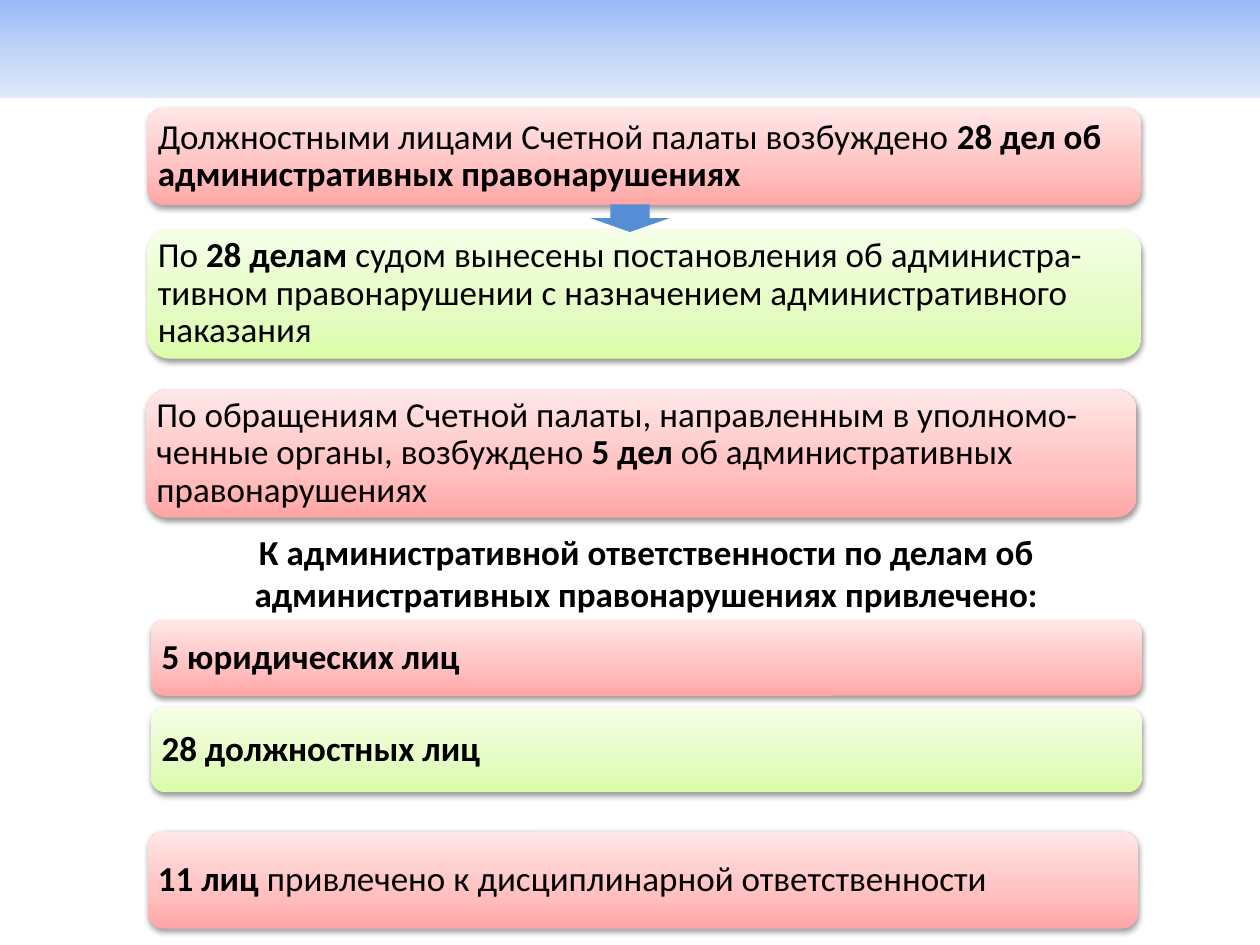
from dataclasses import dataclass

from lxml import etree
from pptx import Presentation
from pptx.dml import color as c
from pptx.enum import shapes as s, text as t
from pptx.oxml import ns
from pptx.util import Pt

BLACK = c.RGBColor(0x00, 0x00, 0x00)
ARROW_BLUE = c.RGBColor(0x55, 0x8E, 0xD5)

Stops = tuple[tuple[int, c.RGBColor], ...]
BLUE: Stops = (
    (0, c.RGBColor(0x98, 0xB9, 0xF6)),
    (50, c.RGBColor(0xC0, 0xD3, 0xF8)),
    (100, c.RGBColor(0xE0, 0xE9, 0xFB)),
)
RED: Stops = (
    (0, c.RGBColor(0xFF, 0xA6, 0xA5)),
    (35, c.RGBColor(0xFF, 0xC0, 0xBF)),
    (100, c.RGBColor(0xFF, 0xE7, 0xE7)),
)
GREEN: Stops = (
    (0, c.RGBColor(0xDA, 0xFD, 0xA7)),
    (35, c.RGBColor(0xE4, 0xFC, 0xC2)),
    (100, c.RGBColor(0xF5, 0xFF, 0xE7)),
)

TEXT_INSET = 6
CORNER_INSET = 0.05


@dataclass(frozen=True)
class Phrase:
    wording: str
    bold: bool = False


@dataclass(frozen=True)
class Card:
    left: float
    top: float
    width: float
    height: float
    stops: Stops
    phrases: tuple[Phrase, ...]


CARDS = (
    Card(84.3, 61.8, 568, 55.5, RED, (
        Phrase("Должностными лицами Счетной палаты возбуждено "),
        Phrase("28 дел об административных правонарушениях", True),
    )),
    Card(84.3, 130.8, 568, 74.2, GREEN, (
        Phrase("По "),
        Phrase("28 делам ", True),
        Phrase("судом вынесены постановления об администра-тивном "
               "правонарушении с назначением административного наказания"),
    )),
    Card(83.5, 222.5, 566, 73.3, RED, (
        Phrase("По обращениям Счетной палаты, направленным в "
               "уполномо-ченные органы, возбуждено "),
        Phrase("5 дел ", True),
        Phrase("об административных правонарушениях"),
    )),
    Card(86.4, 354.2, 566, 43.4, RED, (Phrase("5 юридических лиц", True),)),
    Card(86.4, 404, 566, 48.8, GREEN, (Phrase("28 должностных лиц", True),)),
    Card(84.3, 475.2, 566, 55.5, RED, (
        Phrase("11 лиц ", True),
        Phrase("привлечено к дисциплинарной ответственности"),
    )),
)


def add_plain(slide, kind, left: float, top: float, width: float, height: float):
    shape = slide.shapes.add_shape(kind, Pt(left), Pt(top), Pt(width), Pt(height))
    shape.shadow.inherit = False
    shape.line.fill.background()
    return shape


def paint_gradient(shape, stops: Stops, angle: int) -> None:
    shape.fill.gradient()
    shape.fill.gradient_angle = angle
    stop_list = shape.element.spPr.find(".//" + ns.qn("a:gsLst"))
    stop_list.clear()
    for position, shade in stops:
        stop = etree.SubElement(stop_list, ns.qn("a:gs"), pos=str(position * 1000))
        etree.SubElement(stop, ns.qn("a:srgbClr"), val=str(shade))


def cast_shadow(shape) -> None:
    effects = shape.element.spPr.find(ns.qn("a:effectLst"))
    shadow = etree.SubElement(
        effects, ns.qn("a:outerShdw"), blurRad=str(Pt(3.1)), dist=str(Pt(1.6)),
        dir="5400000", rotWithShape="0")
    shade = etree.SubElement(shadow, ns.qn("a:srgbClr"), val=str(BLACK))
    etree.SubElement(shade, ns.qn("a:alpha"), val="38000")


def write_phrases(paragraph, phrases: tuple[Phrase, ...]) -> None:
    paragraph.font.name = "Calibri"
    paragraph.font.size = Pt(20)
    paragraph.font.color.rgb = BLACK
    for phrase in phrases:
        run = paragraph.add_run()
        run.text = phrase.wording
        if len(phrases) > 1:
            run.font.bold = phrase.bold
    if len(phrases) == 1:
        paragraph.font.bold = phrases[0].bold


def add_card(slide, card: Card) -> None:
    box = add_plain(slide, s.MSO_SHAPE.ROUNDED_RECTANGLE,
                    card.left, card.top, card.width, card.height)
    paint_gradient(box, card.stops, 90)
    cast_shadow(box)
    frame = box.text_frame
    frame.word_wrap = True
    frame.vertical_anchor = t.MSO_ANCHOR.MIDDLE
    inset = Pt(TEXT_INSET - CORNER_INSET * card.height)
    frame.margin_left = frame.margin_right = inset
    frame.margin_top = frame.margin_bottom = inset
    paragraph = frame.paragraphs[0]
    paragraph.alignment = t.PP_ALIGN.LEFT
    paragraph.line_spacing = 0.9
    write_phrases(paragraph, card.phrases)


def add_heading(slide) -> None:
    heading = slide.shapes.add_textbox(Pt(86.4), Pt(299.5), Pt(566), Pt(55.7))
    heading.text_frame.word_wrap = True
    paragraph = heading.text_frame.paragraphs[0]
    paragraph.alignment = t.PP_ALIGN.CENTER
    write_phrases(paragraph, (
        Phrase("К административной ответственности по делам об "
               "административных правонарушениях привлечено:", True),
    ))


def main() -> None:
    deck = Presentation()
    deck.slide_width, deck.slide_height = Pt(720), Pt(540)
    slide = deck.slides.add_slide(deck.slide_layouts[6])

    banner = add_plain(slide, s.MSO_SHAPE.RECTANGLE, 0, 0, 720, 56)
    paint_gradient(banner, BLUE, 270)
    for card in CARDS:
        add_card(slide, card)
    arrow = add_plain(slide, s.MSO_SHAPE.DOWN_ARROW, 337.5, 116.8, 45, 15.8)
    arrow.fill.solid()
    arrow.fill.fore_color.rgb = ARROW_BLUE
    add_heading(slide)

    deck.save("out.pptx")


if __name__ == "__main__":
    main()
